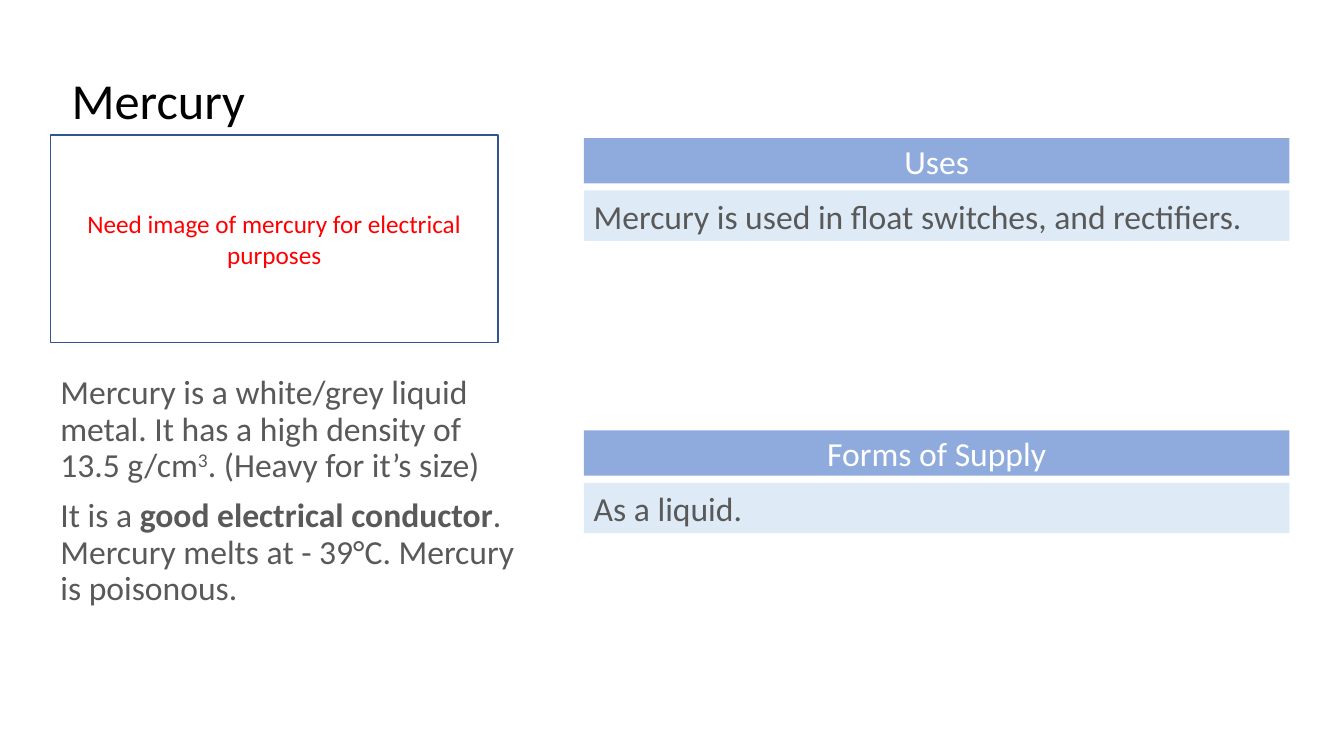
from pptx import Presentation
from pptx.dml.color import RGBColor
from pptx.enum import shapes, text
from pptx.util import Inches, Pt

TITLE = "Mercury"
REQUEST = "Need image of mercury for electrical purposes"
DESCRIPTION = [
    [
        ("Mercury is a white/grey liquid metal. It has a high density of 13.5 g/cm", ""),
        ("3", "superscript"),
        (". (Heavy for it’s size)", ""),
    ],
    [
        ("It is a ", ""),
        ("good electrical conductor", "bold"),
        (". Mercury melts at - 39°C. Mercury is poisonous.", ""),
    ],
]
SECTIONS = [
    ("Uses", "Mercury is used in float switches, and rectifiers."),
    ("Forms of Supply", "As a liquid."),
]

FONT = "Calibri"
BLACK, GREY, WHITE, RED = "000000", "595959", "FFFFFF", "FF0000"
HEADING_FILL, DETAIL_FILL, FRAME_LINE = "8FAADC", "DEEBF7", "325491"
LEFT = 0.5
SECTION_LEFT, SECTION_TOP, SECTION_WIDTH, SECTION_STEP = 5.79, 1.37, 7, 2.9
HEADING_HEIGHT, DETAIL_OFFSET, DETAIL_HEIGHT = 0.45, 0.52, 0.5


def color(value):
    return RGBColor.from_string(value)


def add_run(paragraph, words, size, ink, style=""):
    run = paragraph.add_run()
    run.text = words
    run.font.name = FONT
    run.font.size = Pt(size)
    run.font.color.rgb = color(ink)
    run.font.bold = style == "bold"
    if style == "superscript":
        run._r.get_or_add_rPr().set("baseline", "30000")


def add_panel(slide, box, words, size, ink, fill=None, line=None,
              align=text.PP_ALIGN.CENTER, anchor=text.MSO_ANCHOR.MIDDLE):
    panel = slide.shapes.add_shape(shapes.MSO_SHAPE.RECTANGLE, *map(Inches, box))
    panel.shadow.inherit = False
    if fill:
        panel.fill.solid()
        panel.fill.fore_color.rgb = color(fill)
    else:
        panel.fill.background()
    if line:
        panel.line.color.rgb = color(line)
        panel.line.width = Pt(1)
    else:
        panel.line.fill.background()
    frame = panel.text_frame
    frame.word_wrap = True
    frame.vertical_anchor = anchor
    paragraph = frame.paragraphs[0]
    paragraph.alignment = align
    add_run(paragraph, words, size, ink)
    return panel


def add_title(slide):
    title = slide.shapes.title
    title.left, title.top, title.width, title.height = map(Inches, (0.61, 0.29, 11.29, 1.05))
    frame = title.text_frame
    frame.auto_size = text.MSO_AUTO_SIZE.NONE
    frame.word_wrap = True
    frame.vertical_anchor = text.MSO_ANCHOR.BOTTOM
    paragraph = frame.paragraphs[0]
    paragraph.alignment = text.PP_ALIGN.LEFT
    paragraph.line_spacing = 0.9
    add_run(paragraph, TITLE, 36, BLACK)


def add_description(slide):
    description = slide.shapes.add_textbox(*map(Inches, (LEFT, 3.68, 4.79, 2.08)))
    frame = description.text_frame
    frame.word_wrap = True
    for index, sentences in enumerate(DESCRIPTION):
        paragraph = frame.add_paragraph() if index else frame.paragraphs[0]
        paragraph.line_spacing = 0.9
        paragraph.space_before = Pt(10)
        for words, style in sentences:
            add_run(paragraph, words, 24, GREY, style)


def add_sections(slide):
    for index, (heading, detail) in enumerate(SECTIONS):
        top = SECTION_TOP + index * SECTION_STEP
        add_panel(slide, (SECTION_LEFT, top, SECTION_WIDTH, HEADING_HEIGHT),
                  heading, 24, WHITE, HEADING_FILL)
        detail_panel = add_panel(
            slide, (SECTION_LEFT, top + DETAIL_OFFSET, SECTION_WIDTH, DETAIL_HEIGHT),
            detail, 24, GREY, DETAIL_FILL,
            align=text.PP_ALIGN.LEFT, anchor=text.MSO_ANCHOR.TOP)
        detail_panel.text_frame.auto_size = text.MSO_AUTO_SIZE.SHAPE_TO_FIT_TEXT


def main():
    deck = Presentation()
    deck.slide_width, deck.slide_height = Inches(13.33), Inches(7.5)
    slide = deck.slides.add_slide(deck.slide_layouts[5])
    add_title(slide)
    add_description(slide)
    add_sections(slide)
    add_panel(slide, (LEFT, 1.34, 4.44, 2.06), REQUEST, 18, RED, line=FRAME_LINE)
    deck.save("out.pptx")


if __name__ == "__main__":
    main()
